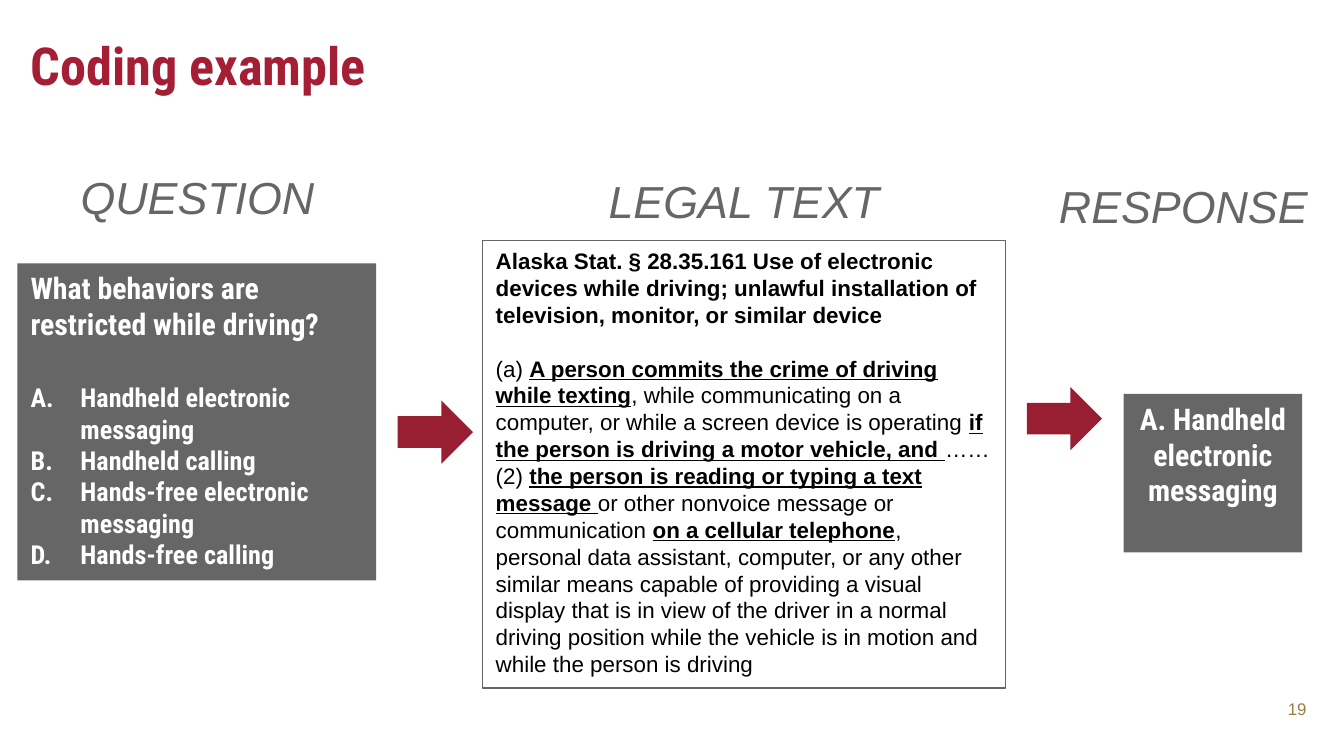
"""Build the coding example slide: question, legal text and response."""
from dataclasses import dataclass

import pptx
import pptx.dml.color
import pptx.enum.shapes
import pptx.enum.text
import pptx.oxml.ns
import pptx.util
from lxml import etree
from pptx.dml.color import RGBColor
from pptx.enum.shapes import MSO_SHAPE
from pptx.enum.text import MSO_ANCHOR, PP_ALIGN
from pptx.util import Inches

CRIMSON = RGBColor(0xA4, 0x1E, 0x35)
ARROW_RED = RGBColor(0x98, 0x1E, 0x32)
GRAY = RGBColor(0x66, 0x66, 0x66)
GOLD = RGBColor(0x9A, 0x7E, 0x40)
WHITE = RGBColor(0xFF, 0xFF, 0xFF)
BLACK = RGBColor(0, 0, 0)
BODY_FONT = "Arial"
DISPLAY_FONT = "Roboto Condensed"
LINE_FACTOR = 1.2


@dataclass(frozen=True)
class Area:
    left: float
    top: float
    width: float
    height: float

    def lengths(self) -> tuple:
        return tuple(Inches(n) for n in (self.left, self.top, self.width, self.height))


@dataclass(frozen=True)
class Style:
    size: float
    font: str
    color: RGBColor
    bold: bool = False
    italic: bool = False
    align: PP_ALIGN = PP_ALIGN.LEFT


@dataclass(frozen=True)
class Heading:
    text: str
    area: Area


TITLE = Style(28, DISPLAY_FONT, CRIMSON, bold=True)
HEADING = Style(24, BODY_FONT, GRAY, italic=True, align=PP_ALIGN.CENTER)
QUESTION = Style(16, DISPLAY_FONT, WHITE, bold=True)
OPTION = Style(14, DISPLAY_FONT, WHITE, bold=True)
RESPONSE = Style(16, DISPLAY_FONT, WHITE, bold=True, align=PP_ALIGN.CENTER)
STATUTE_TITLE = Style(12, BODY_FONT, BLACK, bold=True)
STATUTE = Style(12, BODY_FONT, BLACK)
PAGE_NUMBER = Style(9, BODY_FONT, GOLD, align=PP_ALIGN.RIGHT)

HEADINGS = [
    Heading("QUESTION", Area(0.49, 1.21, 1.96, 0.5)),
    Heading("LEGAL TEXT", Area(4.42, 1.24, 2.23, 0.5)),
    Heading("RESPONSE", Area(7.77, 1.28, 2.07, 0.5)),
]
ARROWS = [Area(2.96, 2.98, 0.56, 0.47), Area(7.64, 2.88, 0.56, 0.47)]
OPTIONS = [
    "Handheld electronic messaging",
    "Handheld calling",
    "Hands-free electronic messaging",
    "Hands-free calling",
]
STATUTE_HEADING = (
    "Alaska Stat. § 28.35.161 Use of electronic devices while driving; "
    "unlawful installation of television, monitor, or similar device"
)
CLAUSES = [
    [
        ("(a) ", False),
        ("A person commits the crime of driving while texting", True),
        (", while communicating on a computer, or while a screen device is operating ", False),
        ("if the person is driving a motor vehicle, and ", True),
        ("……", False),
    ],
    [
        ("(2) ", False),
        ("the person is reading or typing a text message ", True),
        ("or other nonvoice message or communication ", False),
        ("on a cellular telephone", True),
        (", personal data assistant, computer, or any other similar means capable of "
         "providing a visual display that is in view of the driver in a normal driving "
         "position while the vehicle is in motion and while the person is driving", False),
    ],
]


def format_paragraph(para, style: Style) -> None:
    """Apply a style to a paragraph and all its runs."""
    para.alignment = style.align
    para.line_spacing = pptx.util.Pt(style.size * LINE_FACTOR)
    para.space_before = pptx.util.Pt(0)
    for span in para.runs:
        span.font.size = pptx.util.Pt(style.size)
        span.font.name = style.font
        span.font.color.rgb = style.color
        span.font.bold = style.bold
        span.font.italic = style.italic


def add_block(page, shape_type: MSO_SHAPE, area: Area, fill=None, line=None):
    """Add a flat preset shape whose text starts at the top."""
    block = page.shapes.add_shape(shape_type, *area.lengths())
    block.shadow.inherit = False
    if fill is None:
        block.fill.background()
    else:
        block.fill.solid()
        block.fill.fore_color.rgb = fill
    if line is None:
        block.line.fill.background()
    else:
        block.line.color.rgb = line
        block.line.width = pptx.util.Pt(0.75)
    block.text_frame.word_wrap = True
    block.text_frame.vertical_anchor = MSO_ANCHOR.TOP
    return block


def add_label(page, text: str, area: Area, style: Style) -> None:
    """Add a single-line text box."""
    box = page.shapes.add_textbox(*area.lengths())
    box.text_frame.word_wrap = False
    box.text_frame.vertical_anchor = MSO_ANCHOR.MIDDLE
    box.text_frame.text = text
    format_paragraph(box.text_frame.paragraphs[0], style)


def letter_paragraph(para) -> None:
    """Number a paragraph with a capital letter and a hanging indent."""
    properties = para._p.get_or_add_pPr()
    properties.set("marL", str(Inches(0.37)))
    properties.set("indent", str(Inches(-0.37)))
    etree.SubElement(properties, pptx.oxml.ns.qn("a:buFont"), typeface="+mj-lt")
    etree.SubElement(properties, pptx.oxml.ns.qn("a:buAutoNum"), type="alphaUcPeriod")


def add_title(page) -> None:
    """Place and format the title."""
    title = page.shapes.title
    title.left, title.top, title.width, title.height = Area(0.13, 0.15, 9.16, 0.63).lengths()
    frame = title.text_frame
    frame.text = "Coding example"
    frame.auto_size = pptx.enum.text.MSO_AUTO_SIZE.NONE
    frame.vertical_anchor = MSO_ANCHOR.TOP
    frame.margin_top = frame.margin_bottom = Inches(0.1)
    format_paragraph(frame.paragraphs[0], TITLE)


def add_question(page) -> None:
    """Add the question with its lettered options."""
    frame = add_block(page, MSO_SHAPE.RECTANGLE, Area(0.13, 1.96, 2.67, 2.36), fill=GRAY).text_frame
    frame.text = "What behaviors are restricted while driving?"
    format_paragraph(frame.paragraphs[0], QUESTION)
    frame.paragraphs[0].space_after = pptx.util.Pt(21.4)
    for option in OPTIONS:
        para = frame.add_paragraph()
        para.text = option
        format_paragraph(para, OPTION)
        letter_paragraph(para)


def add_legal_text(page) -> None:
    """Add the statute with its relevant passages underlined."""
    frame = add_block(page, MSO_SHAPE.RECTANGLE, Area(3.59, 1.79, 3.89, 3.33), line=GRAY).text_frame
    frame.text = STATUTE_HEADING
    format_paragraph(frame.paragraphs[0], STATUTE_TITLE)
    frame.paragraphs[0].space_after = pptx.util.Pt(STATUTE.size * LINE_FACTOR)
    for clause in CLAUSES:
        para = frame.add_paragraph()
        for text, _ in clause:
            para.add_run().text = text
        format_paragraph(para, STATUTE)
        for span, (_, relevant) in zip(para.runs, clause):
            span.font.bold = span.font.underline = relevant


def add_response(page) -> None:
    """Add the coded response."""
    frame = add_block(page, MSO_SHAPE.RECTANGLE, Area(8.36, 2.93, 1.33, 1.18), fill=GRAY).text_frame
    frame.text = "A. Handheld electronic messaging"
    format_paragraph(frame.paragraphs[0], RESPONSE)


def main() -> None:
    """Build and save the deck."""
    deck = pptx.Presentation()
    deck.slide_width = Inches(10)
    deck.slide_height = deck.slide_width * 9 // 16
    page = deck.slides.add_slide(deck.slide_layouts.get_by_name("Title Only"))
    add_title(page)
    add_question(page)
    add_legal_text(page)
    add_response(page)
    for heading in HEADINGS:
        add_label(page, heading.text, heading.area, HEADING)
    for area in ARROWS:
        add_block(page, MSO_SHAPE.RIGHT_ARROW, area, fill=ARROW_RED)
    add_label(page, "19", Area(9.38, 5.09, 0.44, 0.37), PAGE_NUMBER)
    deck.save("out.pptx")


if __name__ == "__main__":
    main()
